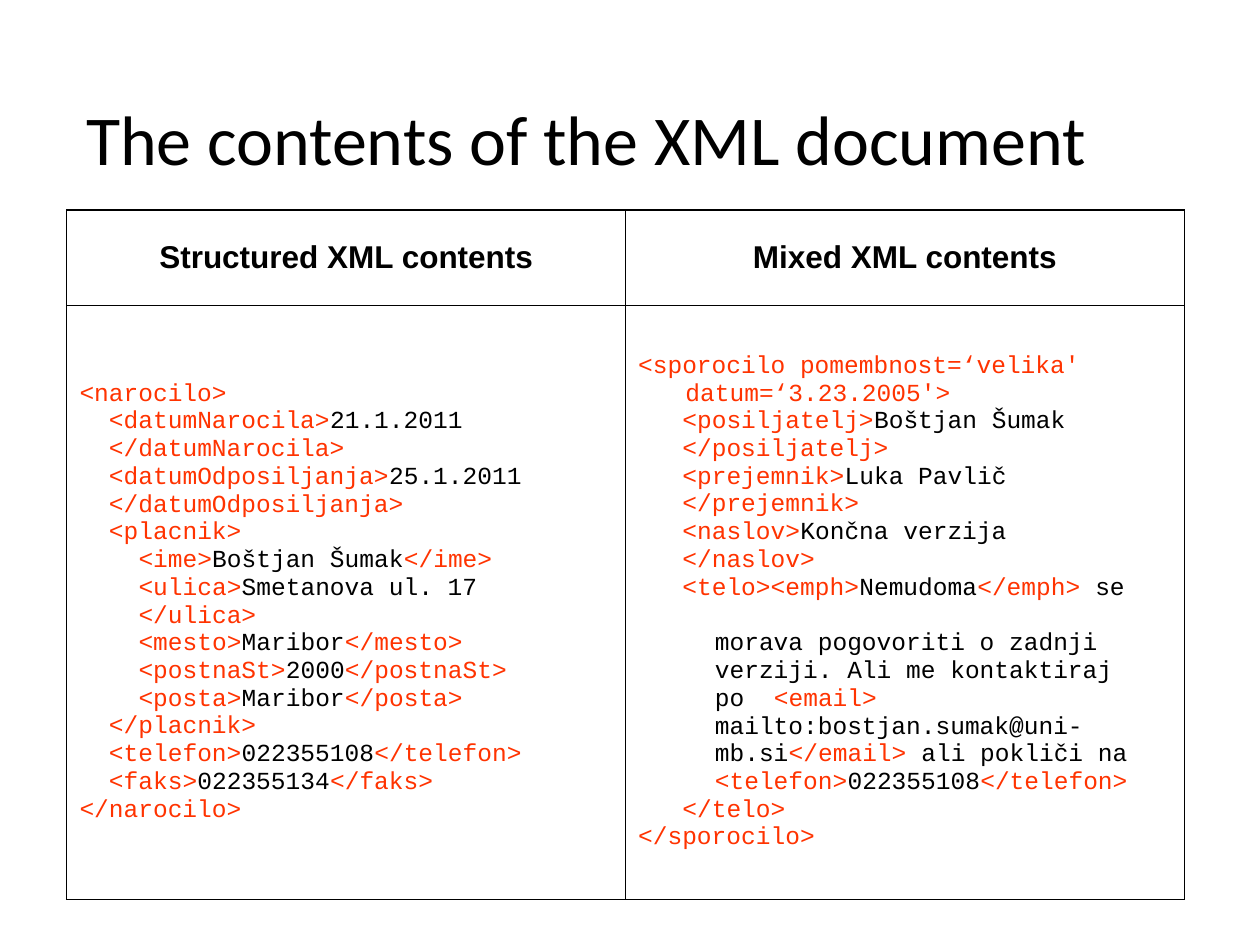
from lxml.etree import SubElement
from pptx import Presentation
from pptx.dml.color import RGBColor
from pptx.enum.text import MSO_ANCHOR as ANCHOR, PP_ALIGN as ALIGN
from pptx.oxml.ns import qn
from pptx.util import Pt

BLACK = RGBColor(0x00, 0x00, 0x00)
RED = RGBColor(0xFF, 0x33, 0x00)
HANG = 27
CODE_SIZE = 14

TITLE_FORMAT = dict(name="Calibri", size=Pt(40))
HEAD_FORMAT = dict(name="Arial", size=Pt(18), bold=True)
CODE_FORMAT = dict(name="Courier New", size=Pt(CODE_SIZE), bold=False)

HEADS = ["Structured XML contents", "Mixed XML contents"]
STRUCTURED = """<narocilo>
  <datumNarocila>21.1.2011
  </datumNarocila>
  <datumOdposiljanja>25.1.2011
  </datumOdposiljanja>
  <placnik>
    <ime>Boštjan Šumak</ime>
    <ulica>Smetanova ul. 17
    </ulica>
    <mesto>Maribor</mesto>
    <postnaSt>2000</postnaSt>
    <posta>Maribor</posta>
  </placnik>
  <telefon>022355108</telefon>
  <faks>022355134</faks>
</narocilo>"""
MIXED = """<sporocilo pomembnost=‘velika' datum=‘3.23.2005'>
   <posiljatelj>Boštjan Šumak
   </posiljatelj>
   <prejemnik>Luka Pavlič
   </prejemnik>
   <naslov>Končna verzija
   </naslov>
   <telo><emph>Nemudoma</emph> se"""
MESSAGE = """  morava pogovoriti o zadnji
  verziji. Ali me kontaktiraj
  po  <email>
  mailto:bostjan.sumak@uni-
  mb.si</email> ali pokliči na
  <telefon>022355108</telefon>"""
MIXED_END = """   </telo>
</sporocilo>"""


def add_run(p, text, color, fmt):
    if text:
        r = p.add_run()
        r.text = text
        r.font.color.rgb = color
        for key, value in fmt.items():
            setattr(r.font, key, value)


def add_code(p, line):
    """Add one line of XML: tags in red, content in black."""
    content, *pieces = line.split("<")
    add_run(p, content, BLACK, CODE_FORMAT)
    for piece in pieces:
        tag, _, content = piece.partition(">")
        add_run(p, f"<{tag}>", RED, CODE_FORMAT)
        add_run(p, content, BLACK, CODE_FORMAT)


prs = Presentation()
prs.slide_width, prs.slide_height = Pt(720), Pt(540)
s = prs.slides.add_slide(prs.slide_layouts[5])

# Title
title = s.shapes.title
title.left, title.top, title.width, title.height = Pt(42), Pt(37.5), Pt(642), Pt(82.5)
title.text_frame.vertical_anchor = ANCHOR.MIDDLE
p = title.text_frame.paragraphs[0]
p.alignment = ALIGN.LEFT
add_run(p, "The contents of the XML document", BLACK, TITLE_FORMAT)

# Table frame
frame = s.shapes.add_table(2, 2, Pt(38.25), Pt(120), Pt(638.5), Pt(394))
table = frame.table
table.first_row = table.horz_banding = False
for row, height in zip(table.rows, (54.75, 339.25)):
    row.height = Pt(height)
for cell in table.iter_cells():
    cell.vertical_anchor = ANCHOR.MIDDLE
    tcPr = cell._tc.get_or_add_tcPr()
    for side in ("a:lnL", "a:lnR", "a:lnT", "a:lnB"):
        ln = SubElement(tcPr, qn(side), w=str(Pt(0.75)))
        SubElement(SubElement(ln, qn("a:solidFill")), qn("a:srgbClr"), val=str(BLACK))
    cell.fill.background()

# Column heads
for col, head in enumerate(HEADS):
    p = table.cell(0, col).text_frame.paragraphs[0]
    p.alignment = ALIGN.CENTER
    add_run(p, head, BLACK, HEAD_FORMAT)

# XML listings, each paragraph with a hanging indent
mixed_lines = MIXED.split("\n") + [MESSAGE] + MIXED_END.split("\n")
for col, listing in enumerate((STRUCTURED.split("\n"), mixed_lines)):
    tf = table.cell(1, col).text_frame
    for i, text in enumerate(listing):
        p = tf.add_paragraph() if i else tf.paragraphs[0]
        is_message = text == MESSAGE
        pPr = p._p.get_or_add_pPr()
        pPr.set("marL", str(Pt(HANG)))
        pPr.set("indent", "0" if is_message else str(-Pt(HANG)))
        if is_message:
            p.space_before = Pt(16)
        for n, line in enumerate(text.split("\n")):
            if n:
                p.add_line_break()
                SubElement(p._p[-1], qn("a:rPr"), sz=str(CODE_SIZE * 100))
            add_code(p, line)

prs.save("out.pptx")
